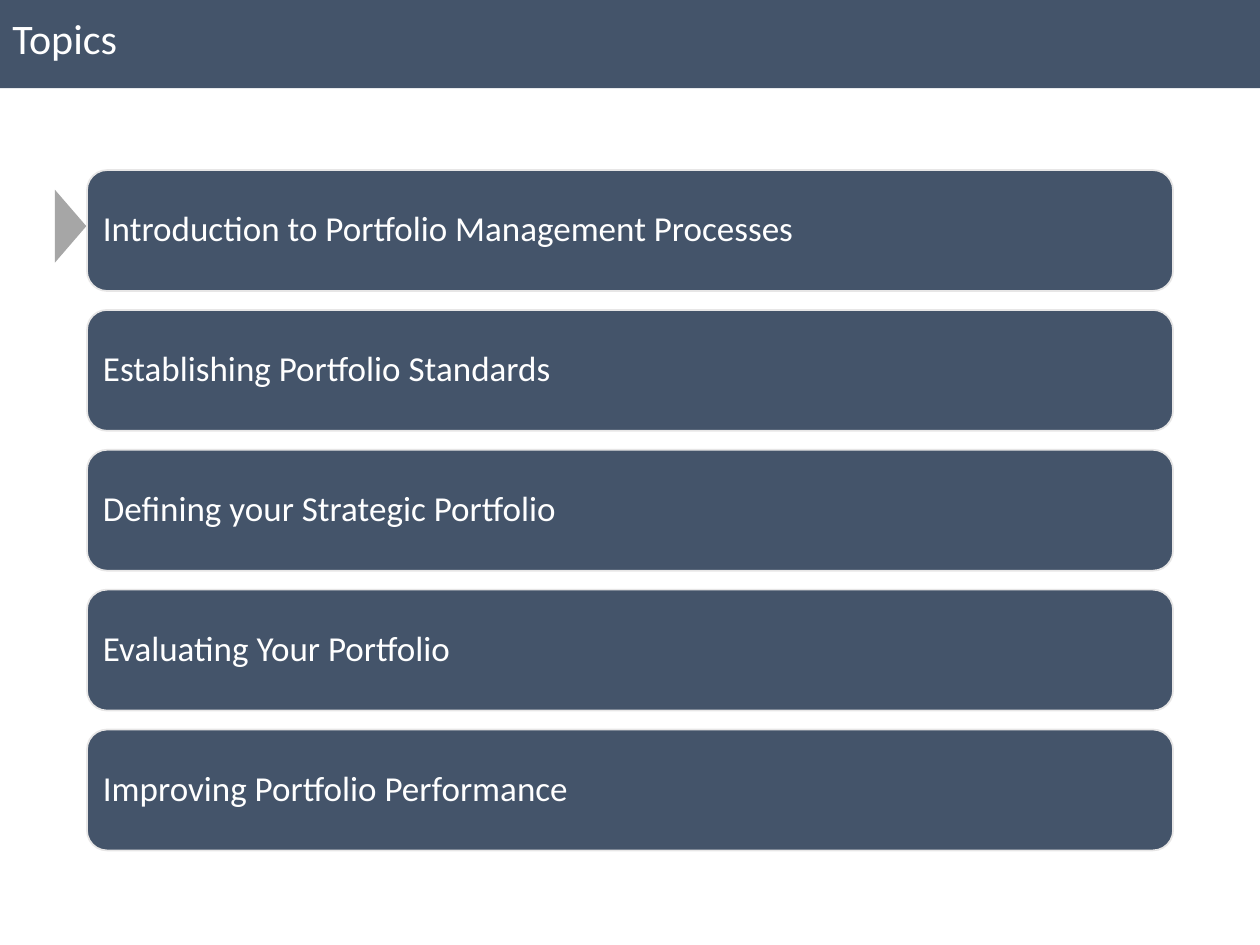
"""Build the Topics slide: a title band, five topic bars and a marker at the current topic."""
import pptx
import pptx.util
from pptx.dml.color import RGBColor
from pptx.enum.shapes import MSO_SHAPE
from pptx.enum.text import MSO_ANCHOR, PP_ALIGN
from pptx.util import Inches

TITLE = "Topics"
TOPICS = [
    "Introduction to Portfolio Management Processes",
    "Establishing Portfolio Standards",
    "Defining your Strategic Portfolio",
    "Evaluating Your Portfolio",
    "Improving Portfolio Performance",
]
COLORS = {"slate": "44546A", "marker": "A6A6A6", "outline": "E7E6E6", "text": "FFFFFF"}
FONT = "Calibri"
BAR_LEFT, BAR_TOP, BAR_WIDTH, BAR_HEIGHT = 0.69, 1.35, 8.62, 0.96
BAR_PITCH = 1.11


def color(name):
    return RGBColor.from_string(COLORS[name])


def add_block(slide, preset, box, fill, outline=None):
    block = slide.shapes.add_shape(preset, *map(Inches, box))
    block.shadow.inherit = False
    block.fill.solid()
    block.fill.fore_color.rgb = color(fill)
    if outline:
        block.line.color.rgb = color(outline)
        block.line.width = pptx.util.Pt(1)
    else:
        block.line.fill.background()
    return block


def write(block, text, size, inset, anchor):
    frame = block.text_frame
    frame.text = text
    frame.word_wrap = True
    frame.vertical_anchor = anchor
    frame.margin_left = frame.margin_right = Inches(inset)
    frame.margin_top = frame.margin_bottom = Inches(0.1)
    paragraph = frame.paragraphs[0]
    paragraph.alignment = PP_ALIGN.LEFT
    font = paragraph.runs[0].font
    font.name, font.size = FONT, pptx.util.Pt(size)
    font.color.rgb = color("text")
    return paragraph


def main():
    deck = pptx.Presentation()
    deck.slide_width, deck.slide_height = Inches(10), Inches(7.5)
    slide = deck.slides.add_slide(deck.slide_layouts[6])

    title_band = add_block(slide, MSO_SHAPE.RECTANGLE, (0, 0, 10, 0.7), "slate")
    write(title_band, TITLE, 24, 0.1, MSO_ANCHOR.TOP)

    marker = add_block(slide, MSO_SHAPE.ISOSCELES_TRIANGLE, (0.27, 1.67, 0.58, 0.25), "marker")
    marker.rotation = 90

    for row, topic in enumerate(TOPICS):
        box = (BAR_LEFT, BAR_TOP + row * BAR_PITCH, BAR_WIDTH, BAR_HEIGHT)
        bar = add_block(slide, MSO_SHAPE.ROUNDED_RECTANGLE, box, "slate", "outline")
        write(bar, topic, 20, 0.08, MSO_ANCHOR.MIDDLE).line_spacing = 0.9

    deck.save("out.pptx")


if __name__ == "__main__":
    main()
